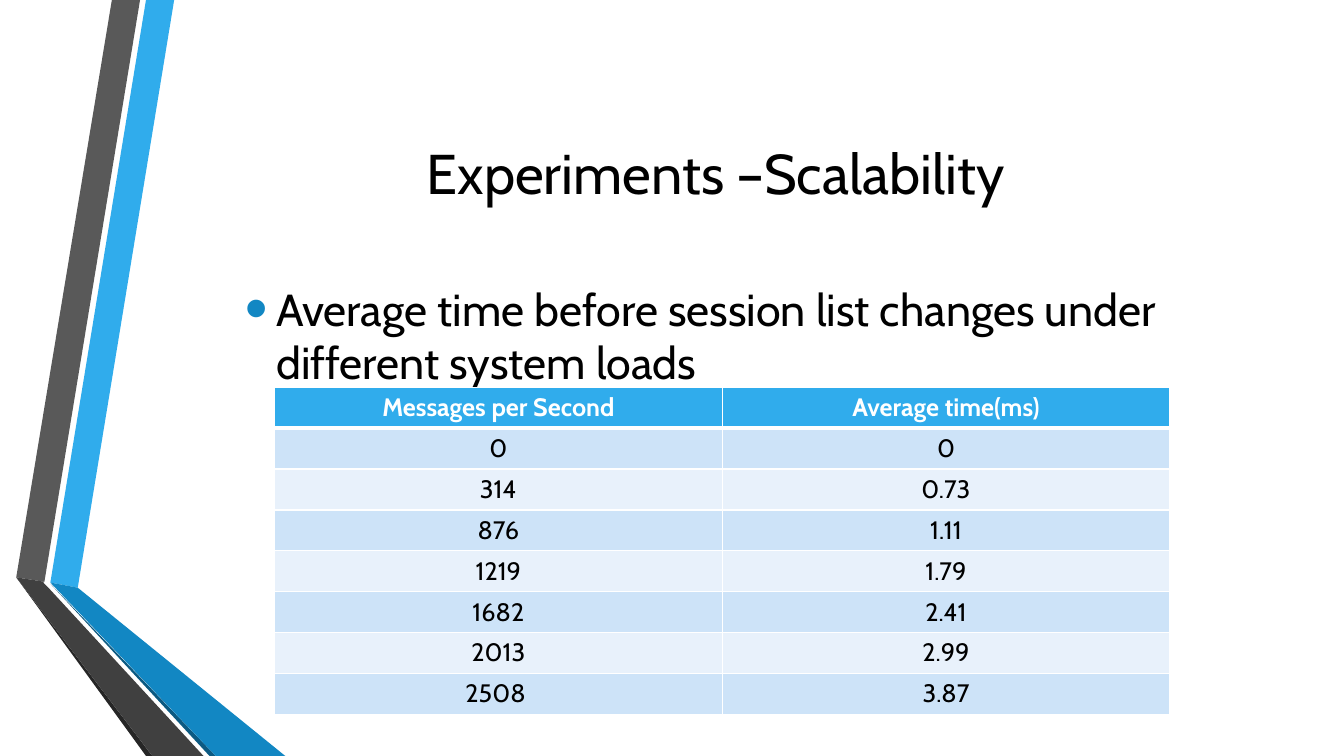
import pptx
import pptx.dml.color
import pptx.enum.text
import pptx.util
from lxml import etree
from pptx.oxml.ns import qn

Cm, Pt = pptx.util.Cm, pptx.util.Pt
RGB = pptx.dml.color.RGBColor.from_string
ALIGN, ANCHOR = pptx.enum.text.PP_ALIGN, pptx.enum.text.MSO_ANCHOR
COLORS = {
    "black": "000000", "white": "FFFFFF",
    "blue": "30ACEC", "mid_blue": "1287C3", "deep_blue": "0C5A82",
    "gray": "595959", "dark_gray": "404040", "deep_gray": "262626",
    "band_dark": "CDE3F8", "band_light": "E8F1FB",
}


def add_run(p, text, size, color="black", bold=False):
    r = p.add_run()
    r.text = text
    r.font.name = "Cabin"
    r.font.size = Pt(size)
    r.font.bold = bold
    r.font.color.rgb = RGB(COLORS[color])


def add_border(cell, side, width):
    """Draw a white line on one side (L, R, T or B) of a table cell."""
    ln = etree.SubElement(cell._tc.get_or_add_tcPr(), qn(f"a:ln{side}"), w=str(Pt(width)))
    fill = etree.SubElement(ln, qn("a:solidFill"))
    etree.SubElement(fill, qn("a:srgbClr"), val=COLORS["white"])


prs = pptx.Presentation()
prs.slide_width, prs.slide_height = Cm(33.87), Cm(19.05)
s = prs.slides.add_slide(prs.slide_layouts[6])

# Folded ribbons on the left, corner points in cm
ribbons = [
    ("blue", [(1.27, 14.68), (1.96, 14.81), (4.39, 0), (3.68, 0)]),
    ("gray", [(3.53, 0), (2.82, 0), (0.41, 14.55), (1.12, 14.66)]),
    ("deep_gray", [(0.41, 14.55), (3.68, 19.05), (3.84, 19.05)]),
    ("deep_blue", [(1.27, 14.71), (5.28, 19.05), (5.44, 19.05)]),
    ("mid_blue", [(1.27, 14.68), (5.44, 19.05), (7.19, 19.05), (1.96, 14.81)]),
    ("dark_gray", [(5.13, 19.05), (1.22, 14.81), (1.09, 14.68), (1.12, 14.66),
                   (0.41, 14.55), (3.84, 19.05)]),
]
for color, points in ribbons:
    corners = [(Cm(x), Cm(y)) for x, y in points]
    builder = s.shapes.build_freeform(*corners[0])
    builder.add_line_segments(corners[1:], close=True)
    sp = builder.convert_to_shape()
    sp.shadow.inherit = False
    sp.fill.solid()
    sp.fill.fore_color.rgb = RGB(COLORS[color])
    sp.line.fill.background()

# Bulleted statement
tf = s.shapes.add_textbox(Cm(5.92), Cm(5.82), Cm(26.04), Cm(10.26)).text_frame
tf.word_wrap = True
tf.margin_top = Cm(1.27)
p = tf.paragraphs[0]
pPr = p._p.get_or_add_pPr()
pPr.set("marL", str(Cm(0.79)))
pPr.set("indent", str(-Cm(0.79)))
bullet_color = etree.SubElement(pPr, qn("a:buClr"))
etree.SubElement(bullet_color, qn("a:srgbClr"), val=COLORS["mid_blue"])
etree.SubElement(pPr, qn("a:buSzPct"), val="145000")
etree.SubElement(pPr, qn("a:buFont"), typeface="Arial")
etree.SubElement(pPr, qn("a:buChar"), char="•")
add_run(p, "Average time before session list changes under different system loads", 32)

# Title
tf = s.shapes.add_textbox(Cm(4.11), Cm(1.9), Cm(27.84), Cm(4.88)).text_frame
tf.word_wrap = True
tf.vertical_anchor = ANCHOR.MIDDLE
p = tf.paragraphs[0]
p.alignment = ALIGN.CENTER
add_run(p, "Experiments –Scalability", 40)

# Measurements
rows = [
    ("Messages per Second", "Average time(ms)"),
    ("0", "0"), ("314", "0.73"), ("876", "1.11"), ("1219", "1.79"),
    ("1682", "2.41"), ("2013", "2.99"), ("2508 ", "3.87"),
]
row_height = 1.03
table = s.shapes.add_table(len(rows), 2, Cm(6.92), Cm(9.76), Cm(22.56),
                           Cm(row_height * len(rows))).table
for i, values in enumerate(rows):
    table.rows[i].height = Cm(row_height)
    header = i == 0
    fill = "blue" if header else ("band_dark" if i % 2 else "band_light")
    for j, value in enumerate(values):
        cell = table.cell(i, j)
        for side in "LRTB":
            under_header = (i, side) in ((0, "B"), (1, "T"))
            add_border(cell, side, 3 if under_header else 1)
        cell.fill.solid()
        cell.fill.fore_color.rgb = RGB(COLORS[fill])
        p = cell.text_frame.paragraphs[0]
        p.alignment = ALIGN.CENTER
        add_run(p, value, 18, "white" if header else "black", header)

prs.save("out.pptx")
